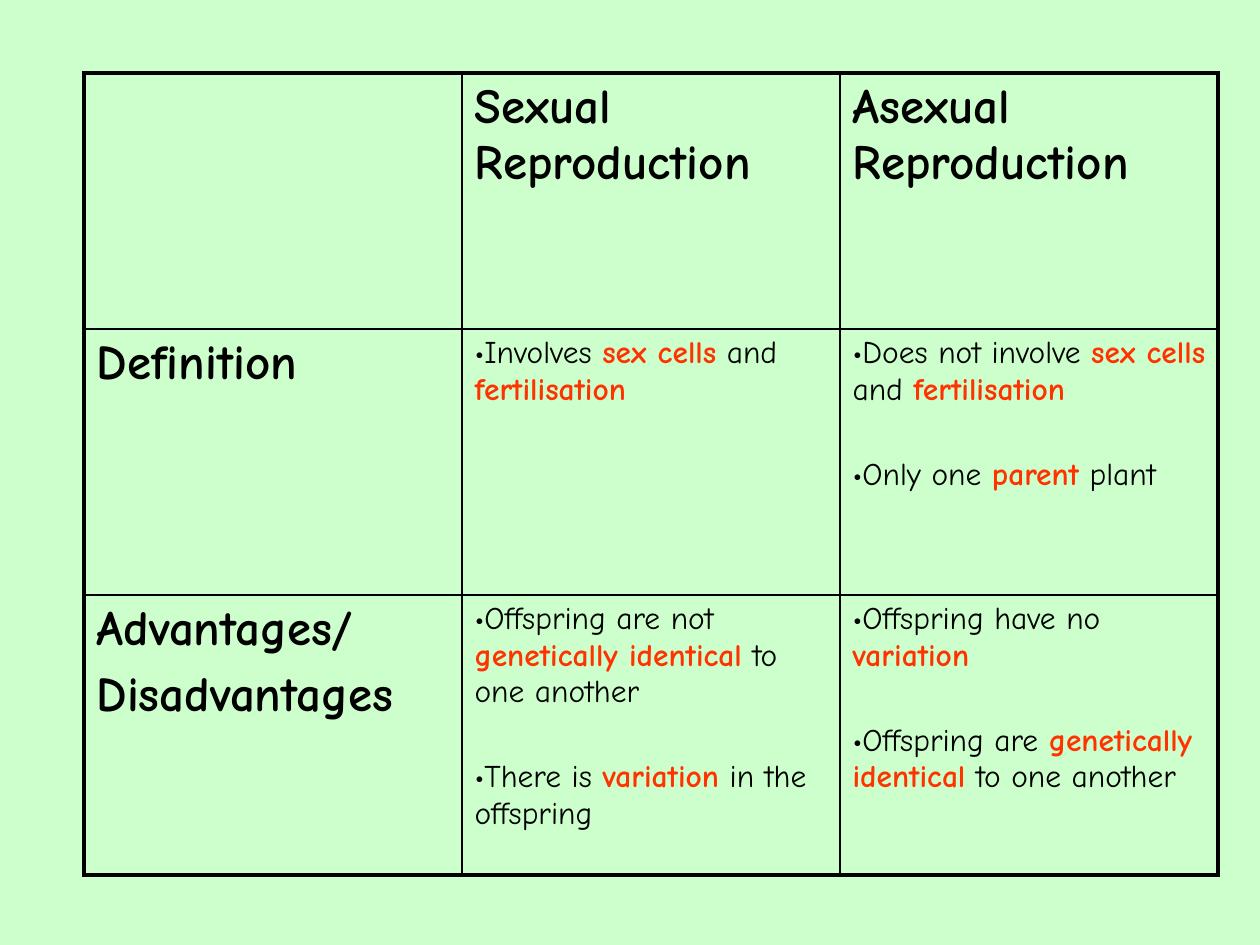
"""Build a slide with a table comparing sexual and asexual reproduction."""
from dataclasses import dataclass

from lxml.etree import SubElement
from pptx import Presentation
from pptx.dml.color import RGBColor
from pptx.oxml.ns import qn
from pptx.util import Pt

PX = 914400 / 126


@dataclass(frozen=True)
class Theme:
    font: str = "Comic Neue"
    paper: str = "CCFFCC"
    ink: str = "000000"
    key: str = "FF3300"
    head: int = 28
    body: int = 18
    thick: float = 2.25
    thin: float = 1


THEME = Theme()
COLS = [378] * 3
ROWS = [256, 266, 280]
GRID = [
    [[], ["Sexual Reproduction"], ["Asexual Reproduction"]],
    [["Definition"],
     ["Involves *sex cells* and *fertilisation*"],
     ["Does not involve *sex cells* and *fertilisation*",
      "Only one *parent* plant"]],
    [["Advantages/", "Disadvantages"],
     ["Offspring are not *genetically identical* to one another",
      "There is *variation* in the offspring"],
     ["Offspring have no *variation*",
      "Offspring are *genetically identical* to one another"]],
]


def px(num):
    """Turn pixels into EMU."""
    return round(num * PX)


def rgb(code):
    """Turn a hex code into a colour."""
    return RGBColor.from_string(code)


def edge(cell, row, col):
    """Draw cell borders, thick along the outside of the table."""
    prop = cell._tc.get_or_add_tcPr()
    sides = {"L": col == 0, "R": col == len(COLS) - 1,
             "T": row == 0, "B": row == len(ROWS) - 1}
    for side, outer in sides.items():
        width = Pt(THEME.thick if outer else THEME.thin)
        line = SubElement(prop, qn(f"a:ln{side}"), w=str(width))
        fill = SubElement(line, qn("a:solidFill"))
        SubElement(fill, qn("a:srgbClr"), val=THEME.ink)
    cell.fill.background()


def style(para, size, gap):
    """Set the font and the space above a paragraph."""
    para.font.name = THEME.font
    para.font.size = Pt(size)
    para.space_before = Pt(gap)


def add_run(para, text, color, bold):
    """Add a run with its colour and weight."""
    run = para.add_run()
    run.text = text
    run.font.color.rgb = rgb(color)
    run.font.bold = bold


def add_head(para, text, gap):
    """Write a bold heading line."""
    style(para, THEME.head, gap)
    add_run(para, text, THEME.ink, True)


def add_point(para, text, gap):
    """Write a bullet whose starred words are highlighted."""
    style(para, THEME.body, gap)
    prop = para._p.get_or_add_pPr()
    prop.set("marL", "0")
    prop.set("indent", "0")
    face = SubElement(prop, qn("a:buFont"), typeface=THEME.font)
    mark = SubElement(prop, qn("a:buChar"), char="•")
    for item in (face, mark):
        prop.find(qn("a:defRPr")).addprevious(item)
    for pos, part in enumerate(text.split("*")):
        if part:
            key = pos % 2 == 1
            add_run(para, part, THEME.key if key else THEME.ink, key)


def fill_cell(cell, lines, head):
    """Write all lines of one cell."""
    write, gap = (add_head, 5.6) if head else (add_point, 28)
    frame = cell.text_frame
    for pos, text in enumerate(lines):
        para = frame.add_paragraph() if pos else frame.paragraphs[0]
        write(para, text, gap if pos else 0)


def add_grid(slide):
    """Add the comparison table."""
    shape = slide.shapes.add_table(len(ROWS), len(COLS), px(84), px(73),
                                   px(sum(COLS)), px(sum(ROWS)))
    table = shape.table
    table.first_row = table.horz_banding = False
    for col, width in zip(table.columns, COLS):
        col.width = px(width)
    for row, height in zip(table.rows, ROWS):
        row.height = px(height)
    for r, line in enumerate(GRID):
        for c, texts in enumerate(line):
            cell = table.cell(r, c)
            edge(cell, r, c)
            fill_cell(cell, texts, r == 0 or c == 0)


def main():
    """Build and save the slide."""
    deck = Presentation()
    deck.slide_width, deck.slide_height = px(1260), px(945)
    slide = deck.slides.add_slide(deck.slide_layouts[6])
    back = slide.background.fill
    back.solid()
    back.fore_color.rgb = rgb(THEME.paper)
    add_grid(slide)
    deck.save("out.pptx")


if __name__ == "__main__":
    main()
